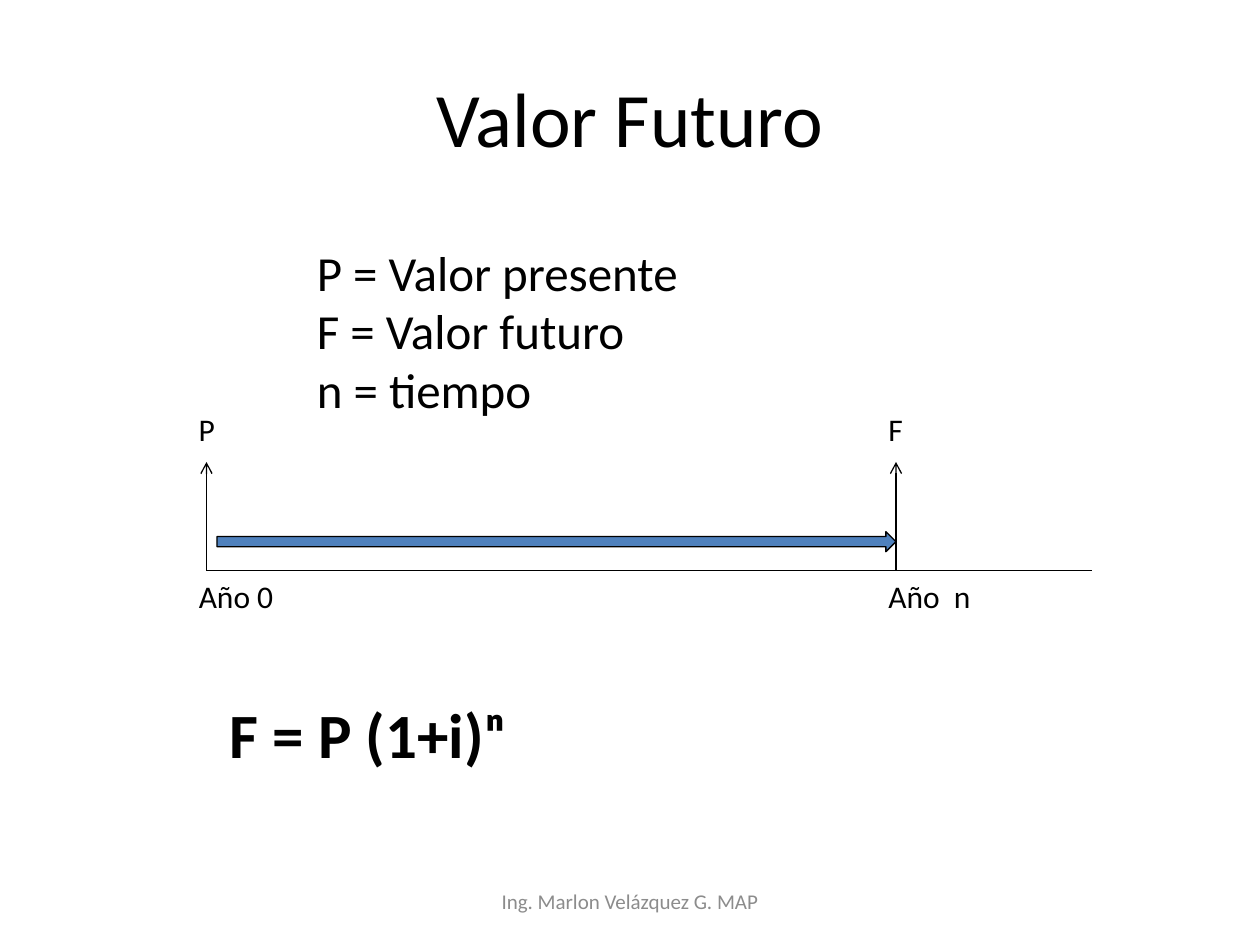
import pptx
import pptx.util
import pptx.dml.color
import pptx.enum.shapes
import pptx.enum.text
import pptx.oxml
import pptx.oxml.ns

Pt = pptx.util.Pt
BLACK = pptx.dml.color.RGBColor(0x00, 0x00, 0x00)
BLUE = pptx.dml.color.RGBColor(0x4F, 0x81, 0xBD)
GREY = pptx.dml.color.RGBColor(0x8C, 0x8C, 0x8C)
ALIGN = pptx.enum.text.PP_ALIGN
ANCHOR = pptx.enum.text.MSO_ANCHOR
KINDS = pptx.enum.shapes


def write(box, lines, size, color=BLACK, bold=False, align=ALIGN.LEFT, anchor=ANCHOR.TOP):
    frame = box.text_frame
    frame.text = "\n".join(lines)
    frame.word_wrap = True
    frame.vertical_anchor = anchor
    style = {"name": "Calibri", "size": Pt(size), "bold": bold}
    for para in frame.paragraphs:
        para.alignment = align
        for run in para.runs:
            for key, value in style.items():
                setattr(run.font, key, value)
            run.font.color.rgb = color


deck = pptx.Presentation()
deck.slide_width, deck.slide_height = Pt(720), Pt(540)
slide = deck.slides.add_slide(deck.slide_layouts[5])

title = slide.shapes.title
place = {"left": 36, "top": 21.6, "width": 648, "height": 90}
for key, value in place.items():
    setattr(title, key, Pt(value))
write(title, ["Valor Futuro"], 44, align=ALIGN.CENTER, anchor=ANCHOR.MIDDLE)

start, end, base, top = 118, 512, 326, 264
lines = [
    (start, base, 624, base, False),
    (start, base, start, top, True),
    (end, base, end, top, True),
]
for x1, y1, x2, y2, head in lines:
    line = slide.shapes.add_connector(
        KINDS.MSO_CONNECTOR.STRAIGHT, Pt(x1), Pt(y1), Pt(x2), Pt(y2))
    line.line.color.rgb = BLACK
    line.line.width = Pt(0.75)
    props = line._element.spPr
    if head:
        tail = pptx.oxml.parse_xml(
            "<a:tailEnd %s type='arrow'/>" % pptx.oxml.ns.nsdecls("a"))
        line.line._get_or_add_ln().append(tail)
    props.append(pptx.oxml.parse_xml("<a:effectLst %s/>" % pptx.oxml.ns.nsdecls("a")))

arrow = slide.shapes.add_shape(
    KINDS.MSO_SHAPE.RIGHT_ARROW, Pt(124), Pt(303.8), Pt(end - 124), Pt(11.5))
arrow.shadow.inherit = False
arrow.fill.solid()
arrow.fill.fore_color.rgb = BLUE
arrow.line.color.rgb = BLACK
arrow.line.width = Pt(0.75)

left, right = start - 11.5, end - 11.5
mid = {"align": ALIGN.CENTER, "anchor": ANCHOR.MIDDLE, "color": GREY}
terms = ["P = Valor presente", "F = Valor futuro", "n = tiempo"]
texts = [
    (left, 230.5, 28, 29, ["P"], 18, {}),
    (right, 230.5, 28, 29, ["F"], 18, {}),
    (174, 134.8, 304, 109, terms, 28, {}),
    (124, 394, 225, 51, ["F = P (1+i)ⁿ"], 36, {"bold": True}),
    (left, base, 62, 29, ["Año 0"], 18, {}),
    (right, base, 73.5, 29, ["Año  n"], 18, {}),
    (246, 500.5, 228, 29, ["Ing. Marlon Velázquez G. MAP"], 12, mid),
]
for x, y, wide, high, words, size, style in texts:
    box = slide.shapes.add_textbox(Pt(x), Pt(y), Pt(wide), Pt(high))
    write(box, words, size, **style)

deck.save("out.pptx")
